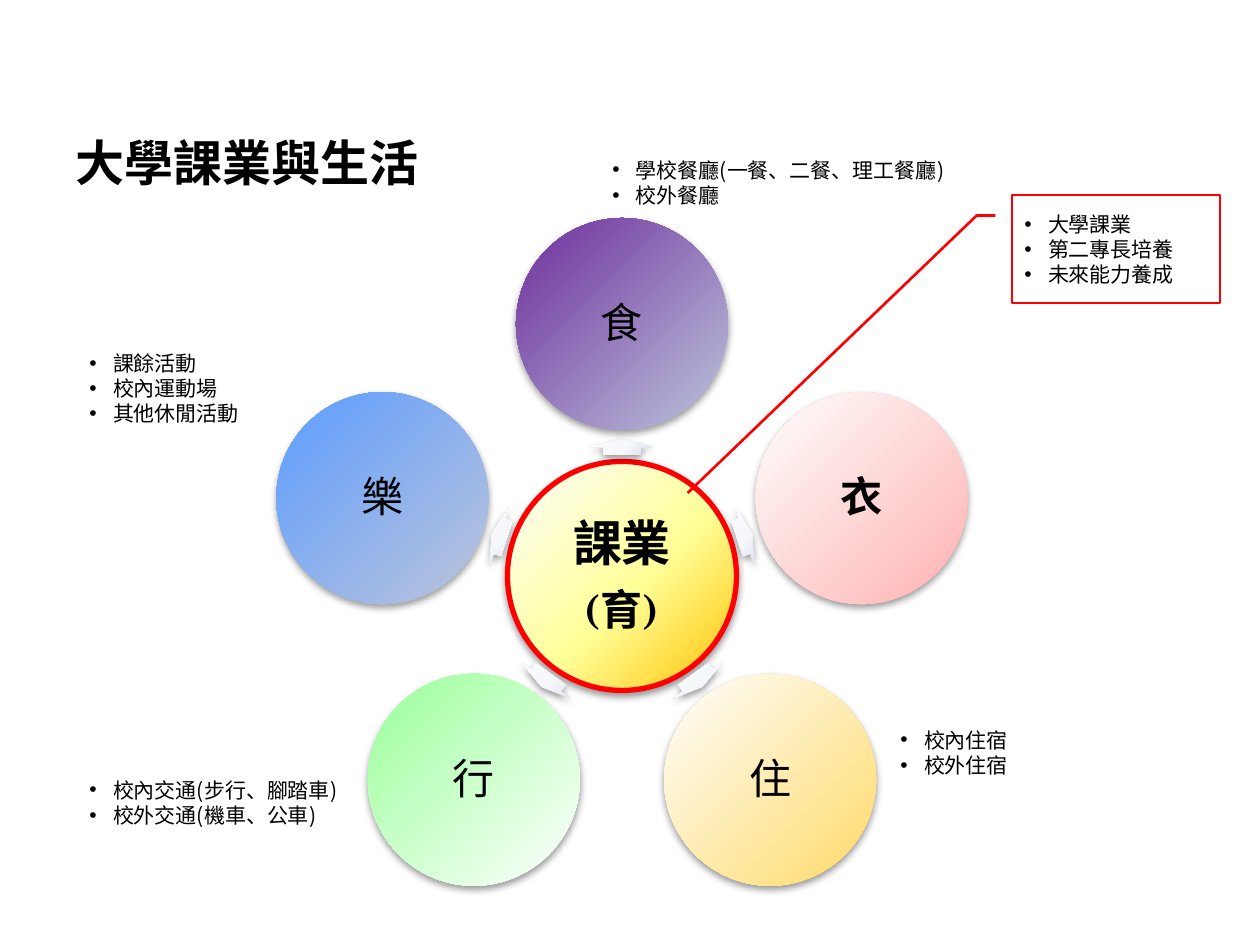
from dataclasses import dataclass
from math import cos, radians, sin

from pptx import Presentation
from pptx.dml.color import RGBColor
from pptx.enum.shapes import MSO_SHAPE as Kind
from pptx.enum.text import MSO_ANCHOR as Anchor, PP_ALIGN as Align
from pptx.oxml import parse_xml
from pptx.oxml.ns import nsdecls, qn
from pptx.slide import Slide
from pptx.util import Emu, Inches, Pt

BLACK = RGBColor(0, 0, 0)
RED = RGBColor(0xFF, 0, 0)
WHITE = RGBColor(0xFE, 0xFE, 0xFE)
YELLOW = RGBColor(0xFF, 0xFF, 0x99)
GOLD = RGBColor(0xFF, 0xC0, 0)
PURPLE = RGBColor(0x6E, 0x2F, 0x9D)
MIST = RGBColor(0xBC, 0xC4, 0xDB)
PINK = RGBColor(0xFF, 0xB2, 0xB2)
SAND = RGBColor(0xFF, 0xDA, 0x69)
GREEN = RGBColor(0x99, 0xFF, 0x99)
SNOW = RGBColor(0xFF, 0xFF, 0xFF)
BLUE = RGBColor(0x5C, 0x9D, 0xFF)
ICE = RGBColor(0xFE, 0xFE, 0xFF)
FROST = RGBColor(0xF6, 0xF7, 0xFA)
STEEL = RGBColor(0xDA, 0xDE, 0xEA)

SANS = "Noto Sans CJK SC"
SERIF = "TeX Gyre Schola"
MID = (622, 576)
HUB = ((0, WHITE), (55, YELLOW), (100, GOLD))
ARROW = ((0, ICE), (55, FROST), (100, STEEL))
WHEEL = (
    ("食", PURPLE, MIST, False),
    ("衣", WHITE, PINK, True),
    ("住", WHITE, SAND, False),
    ("行", GREEN, SNOW, False),
    ("樂", BLUE, MIST, False),
)
LISTS = (
    ((600, 151, 377, 63), ("學校餐廳(一餐、二餐、理工餐廳)", "校外餐廳")),
    ((888, 721, 248, 63), ("校內住宿", "校外住宿")),
    ((77, 771, 286, 63), ("校內交通(步行、腳踏車)", "校外交通(機車、公車)")),
    ((77, 344, 248, 89), ("課餘活動", "校內運動場", "其他休閒活動")),
)


def px(n):
    """Turn pixels into EMU."""
    return Emu(round(n * 914400 / 126))


def polar(angle, reach):
    """Give the point at an angle and a reach from the wheel's middle."""
    turn = radians(angle)
    return MID[0] + reach * cos(turn), MID[1] + reach * sin(turn)


@dataclass
class Deck:
    """Hold the style and the current slide."""

    slide: Slide
    ink: RGBColor = BLACK

    def font(self, para, size, face, bold=False, lead=1.2):
        """Set the font and line pitch of a paragraph."""
        para.line_spacing = Pt(round(size * lead, 1))
        font = para.font
        font.size, font.name, font.bold = Pt(size), face, bold
        font.color.rgb = self.ink
        base = para._p.pPr.find(qn("a:defRPr"))
        base.append(parse_xml(f'<a:ea {nsdecls("a")} typeface="{SANS}"/>'))

    def title(self, text, box):
        """Fill and place the title."""
        shape = self.slide.shapes.title
        shape.left, shape.top, shape.width, shape.height = map(px, box)
        frame = shape.text_frame
        frame.text = text
        frame.vertical_anchor = Anchor.TOP
        para = frame.paragraphs[0]
        para.alignment = Align.LEFT
        self.font(para, 28, SANS, True)

    def glossy(self, kind, point, size, stops):
        """Add a shape with a radial fill and a soft shadow about a point."""
        (x, y), (w, h) = point, size
        shape = self.slide.shapes.add_shape(
            kind, px(x - w / 2), px(y - h / 2), px(w), px(h))
        shape.line.fill.background()
        shape.fill.background()
        shape.shadow.inherit = False
        marks = "".join(
            f'<a:gs pos="{at * 1000}"><a:srgbClr val="{tone}"/></a:gs>'
            for at, tone in stops)
        props = shape._element.spPr
        props.replace(props.find(qn("a:noFill")), parse_xml(
            f'<a:gradFill {nsdecls("a")} rotWithShape="1"><a:gsLst>{marks}</a:gsLst>'
            '<a:path path="circle"><a:fillToRect l="-40000" t="-90000" '
            'r="140000" b="190000"/></a:path></a:gradFill>'))
        props.find(qn("a:effectLst")).append(parse_xml(
            f'<a:outerShdw {nsdecls("a")} blurRad="52070" dist="25400" dir="5400000" '
            'rotWithShape="0"><a:srgbClr val="000000"><a:alpha val="40000"/>'
            '</a:srgbClr></a:outerShdw>'))
        return shape

    def disc(self, point, size, stops, lines, bold):
        """Add a circle with centred lines of text and size."""
        shape = self.glossy(Kind.OVAL, point, (size, size), stops)
        frame = shape.text_frame
        frame.margin_left = frame.margin_right = 0
        frame.margin_top = frame.margin_bottom = 0
        frame.vertical_anchor = Anchor.MIDDLE
        frame.text = "\n".join(text for text, _ in lines)
        for para, (_, pt) in zip(frame.paragraphs, lines):
            para.alignment = Align.CENTER
            para.space_after = Pt(round(pt * 0.35))
            self.font(para, pt, SERIF, bold, 1.08)
        return shape

    def arrow(self, angle):
        """Add an arrow that points out from the wheel's middle."""
        shape = self.glossy(Kind.RIGHT_ARROW, polar(angle, 129), (16, 62), ARROW)
        shape.adjustments[0], shape.adjustments[1] = 0.6, 0.5
        shape.rotation = angle % 360

    def bullets(self, frame, items):
        """Write bulleted lines into a text frame."""
        frame.word_wrap = True
        frame.text = "\n".join(items)
        for para in frame.paragraphs:
            para.alignment = Align.LEFT
            props = para._p.get_or_add_pPr()
            props.set("marL", "171450")
            props.set("indent", "-171450")
            props.append(parse_xml(f'<a:buFont {nsdecls("a")} typeface="Arial"/>'))
            props.append(parse_xml(f'<a:buChar {nsdecls("a")} char="•"/>'))
            self.font(para, 12, SANS)

    def note(self, box, items):
        """Add a bulleted text box."""
        shape = self.slide.shapes.add_textbox(*map(px, box))
        self.bullets(shape.text_frame, items)

    def callout(self, box, items):
        """Add a red framed list with a bent leader."""
        shape = self.slide.shapes.add_shape(Kind.LINE_CALLOUT_2, *map(px, box))
        for i, value in enumerate((0.19, -0.08, 0.19, -0.17, 2.76, -1.56)):
            shape.adjustments[i] = value
        shape.shadow.inherit = False
        shape.fill.background()
        shape.line.color.rgb, shape.line.width = RED, Pt(1.5)
        shape.text_frame.vertical_anchor = Anchor.MIDDLE
        self.bullets(shape.text_frame, items)


def main():
    """Build the slide."""
    show = Presentation()
    show.slide_width, show.slide_height = Inches(10), Inches(7.5)
    deck = Deck(show.slides.add_slide(show.slide_layouts[5]))
    deck.title("大學課業與生活", (63, 126, 1134, 126))
    hub = deck.disc(MID, 229, HUB, (("課業", 28), ("(育)", 24)), True)
    hub.line.color.rgb, hub.line.width = RED, Pt(3)
    for i, (text, first, last, bold) in enumerate(WHEEL):
        angle = 72 * i - 90
        deck.arrow(angle)
        stops = ((0, first), (100, last))
        deck.disc(polar(angle, 252), 212, stops, ((text, 24),), bold)
    for box, items in LISTS:
        deck.note(box, items)
    deck.callout((1012, 195, 208, 108), ("大學課業", "第二專長培養", "未來能力養成"))
    show.save("out.pptx")


if __name__ == "__main__":
    main()
